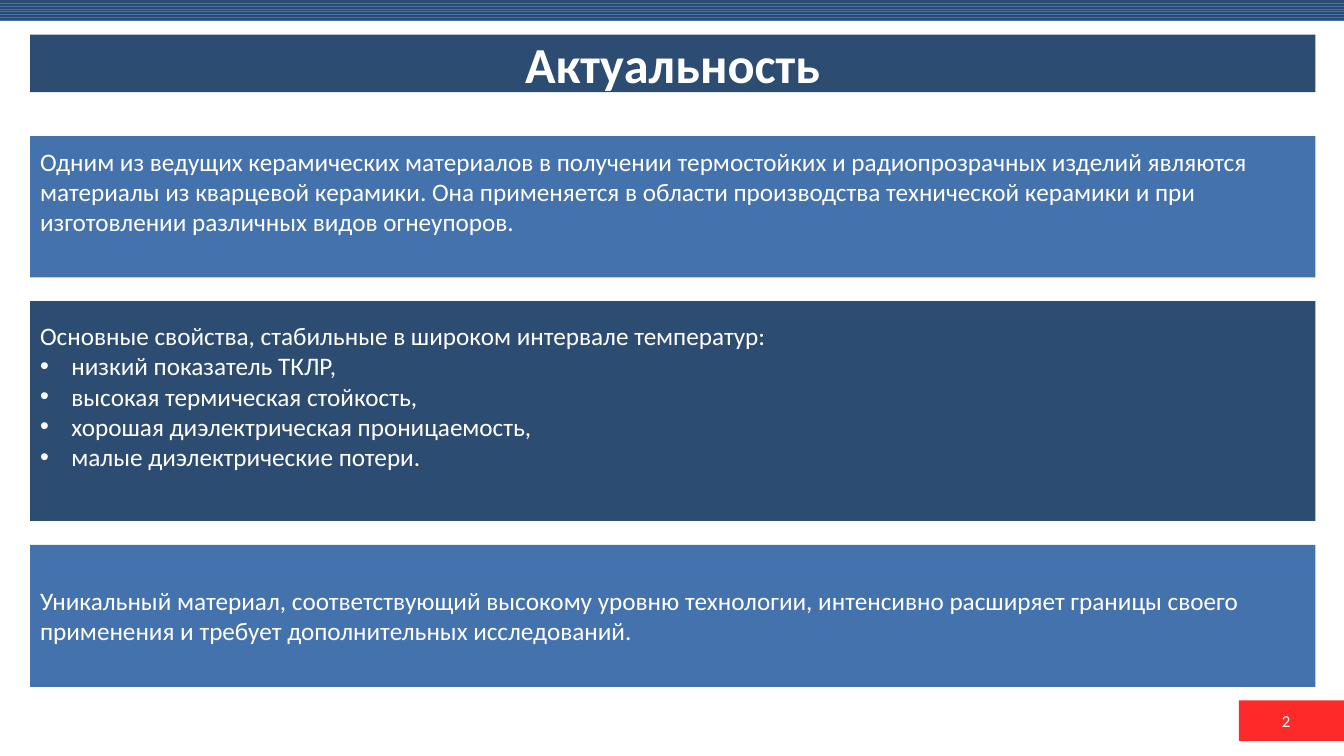
import pptx
import pptx.util
import pptx.dml.color
import pptx.enum.dml
import pptx.enum.shapes
import pptx.enum.text
from lxml import etree

Cm = pptx.util.Cm
Pt = pptx.util.Pt
RGBColor = pptx.dml.color.RGBColor
ALIGN = pptx.enum.text.PP_ALIGN

TITLE = "Актуальность"
PAGE_NUMBER = "2"
NAVY = RGBColor(0x2D, 0x4C, 0x72)
BLUE = RGBColor(0x44, 0x72, 0xAC)
RED = RGBColor(0xFE, 0x29, 0x29)
WHITE = RGBColor(0xFF, 0xFF, 0xFF)
FONT = "Calibri"

# Heights and bottom insets are in centimetres.
PANELS = [
    {
        "fill": BLUE, "height": 3.56, "bottom_inset": 0.89,
        "text": "Одним из ведущих керамических материалов в получении термостойких "
                "и радиопрозрачных изделий являются материалы из кварцевой керамики. "
                "Она применяется в области производства технической керамики "
                "и при изготовлении различных видов огнеупоров.",
        "bullets": [],
    },
    {
        "fill": NAVY, "height": 5.54, "bottom_inset": 0.89,
        "text": "Основные свойства, стабильные в широком интервале температур:",
        "bullets": [
            "низкий показатель ТКЛР,",
            "высокая термическая стойкость,",
            "хорошая диэлектрическая проницаемость,",
            "малые диэлектрические потери.",
        ],
    },
    {
        "fill": BLUE, "height": 3.58, "bottom_inset": 0.13,
        "text": "Уникальный материал, соответствующий высокому уровню технологии, "
                "интенсивно расширяет границы своего применения "
                "и требует дополнительных исследований.",
        "bullets": [],
    },
]

SLIDE_WIDTH, SLIDE_HEIGHT = 33.87, 19.05
LEFT, WIDTH = 0.76, 32.39
PANELS_TOP, PANEL_GAP = 3.43, 0.6
BULLET_INDENT = Cm(0.79)


def add_rectangle(slide, left, top, width, height):
    shape = slide.shapes.add_shape(
        pptx.enum.shapes.MSO_SHAPE.RECTANGLE, Cm(left), Cm(top), Cm(width), Cm(height))
    shape.shadow.inherit = False
    shape.line.fill.background()
    return shape


def fill_solid(shape, color):
    shape.fill.solid()
    shape.fill.fore_color.rgb = color


def prepare_frame(shape):
    """Wrap the text, centre it vertically and keep its size fixed."""
    frame = shape.text_frame
    frame.word_wrap = True
    frame.auto_size = pptx.enum.text.MSO_AUTO_SIZE.NONE
    frame.vertical_anchor = pptx.enum.text.MSO_ANCHOR.MIDDLE
    return frame


def write(paragraph, text, size, alignment, bold=False):
    paragraph.text = text
    paragraph.alignment = alignment
    font = paragraph.font
    font.name, font.size, font.bold = FONT, Pt(size), bold
    font.color.rgb = WHITE


def add_bullet(paragraph):
    properties = paragraph._p.get_or_add_pPr()
    properties.set("marL", str(BULLET_INDENT))
    properties.set("indent", str(-BULLET_INDENT))
    namespace = pptx.oxml.ns.nsdecls("a")
    bullet_font = pptx.oxml.parse_xml(f'<a:buFont {namespace} typeface="Arial"/>')
    bullet = pptx.oxml.parse_xml(f'<a:buChar {namespace} char="•"/>')
    defaults = properties.find(pptx.oxml.ns.qn("a:defRPr"))
    defaults.addprevious(bullet_font)
    defaults.addprevious(bullet)


def add_panel(slide, panel, top):
    shape = add_rectangle(slide, LEFT, top, WIDTH, panel["height"])
    fill_solid(shape, panel["fill"])
    frame = prepare_frame(shape)
    frame.margin_bottom = Cm(panel["bottom_inset"])
    write(frame.paragraphs[0], panel["text"], 18, ALIGN.LEFT)
    for text in panel["bullets"]:
        paragraph = frame.add_paragraph()
        write(paragraph, text, 18, ALIGN.LEFT)
        add_bullet(paragraph)


def main():
    presentation = pptx.Presentation()
    presentation.slide_width = Cm(SLIDE_WIDTH)
    presentation.slide_height = Cm(SLIDE_HEIGHT)
    slide = presentation.slides.add_slide(presentation.slide_layouts[5])

    band = add_rectangle(slide, 0, 0, SLIDE_WIDTH, 0.53)
    band.fill.patterned()
    band.fill.pattern = pptx.enum.dml.MSO_PATTERN.ZIG_ZAG
    band.fill.fore_color.rgb = BLUE
    band.fill.back_color.rgb = NAVY

    title = slide.shapes.title
    title.left, title.top = Cm(LEFT), Cm(0.87)
    title.width, title.height = Cm(WIDTH), Cm(1.45)
    fill_solid(title, NAVY)
    write(prepare_frame(title).paragraphs[0], TITLE, 36, ALIGN.CENTER, bold=True)

    top = PANELS_TOP
    for panel in PANELS:
        add_panel(slide, panel, top)
        top += panel["height"] + PANEL_GAP

    number_tab = add_rectangle(slide, 31.22, 17.65, 2.65, 1.02)
    fill_solid(number_tab, RED)
    number_box = slide.shapes.add_textbox(Cm(25.15), Cm(17.65), Cm(7.62), Cm(1.02))
    write(prepare_frame(number_box).paragraphs[0], PAGE_NUMBER, 12, ALIGN.RIGHT)

    presentation.save("out.pptx")


if __name__ == "__main__":
    main()
